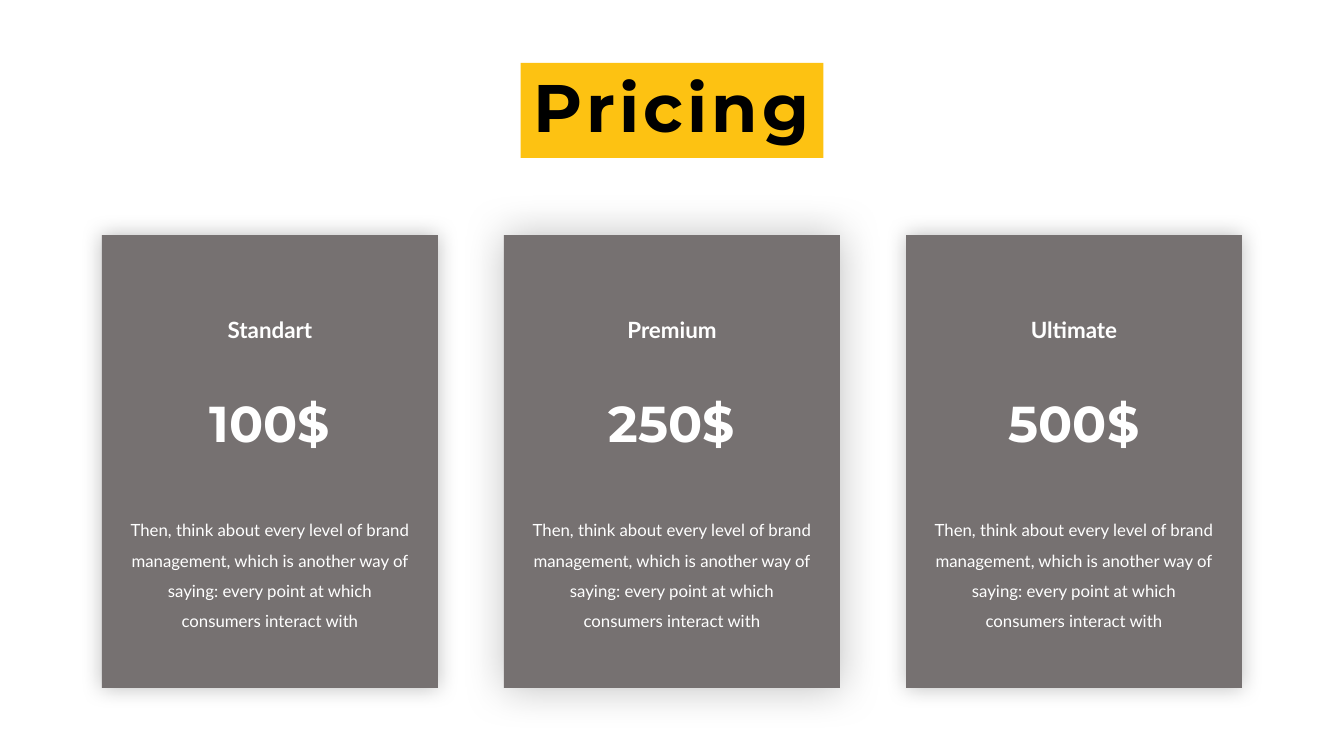
from lxml import etree
from pptx import Presentation
from pptx.dml.color import RGBColor
from pptx.enum.shapes import MSO_SHAPE as Preset
from pptx.enum.text import MSO_ANCHOR as Anchor, MSO_AUTO_SIZE as AutoSize, PP_ALIGN as Align
from pptx.oxml.ns import qn
from pptx.util import Pt

DESCRIPTION = ("Then, think about every level of brand management, which is "
               "another way of saying: every point at which consumers interact with")
TITLE = "Pricing"
PLANS = [
    ("Standart", "100$", DESCRIPTION, 15),
    ("Premium", "250$", DESCRIPTION, 30),
    ("Ultimate", "500$", DESCRIPTION, 15),
]
YELLOW, GRAY, WHITE, BLACK = "FDC212", "767171", "FFFFFF", "000000"

EMU_PER_PX = 914400 / 100.8
SLIDE_WIDTH, SLIDE_HEIGHT = 1344, 756
CARD_WIDTH, CARD_PITCH = 336, 402


def px(length):
    return round(length * EMU_PER_PX)


def color(value):
    return RGBColor.from_string(value)


def place(center, top, width, height):
    return px(center - width / 2), px(top), px(width), px(height)


def add_block(box, fill):
    shape = slide.shapes.add_shape(Preset.RECTANGLE, *box)
    shape.fill.solid()
    shape.fill.fore_color.rgb = color(fill)
    shape.line.fill.background()
    shape.shadow.inherit = False
    return shape


def add_glow_shadow(shape, blur):
    effects = shape._element.spPr.find(qn("a:effectLst"))
    shadow = etree.SubElement(effects, qn("a:outerShdw"), blurRad=str(Pt(blur)),
                              dist="0", dir="0", algn="ctr", rotWithShape="0")
    tint = etree.SubElement(shadow, qn("a:srgbClr"), val=BLACK)
    etree.SubElement(tint, qn("a:alpha"), val="25000")


def add_text(box, text, size, font="Lato", fill=WHITE, bold=False,
             inset=(10, 5), line_spacing=None, tracking=None, grow=False):
    frame = slide.shapes.add_textbox(*box).text_frame
    frame.word_wrap = True
    frame.auto_size = AutoSize.SHAPE_TO_FIT_TEXT if grow else AutoSize.NONE
    frame.vertical_anchor = Anchor.TOP
    frame.margin_left = frame.margin_right = px(inset[0])
    frame.margin_top = frame.margin_bottom = px(inset[1])
    paragraph = frame.paragraphs[0]
    paragraph.alignment = Align.CENTER
    if line_spacing:
        paragraph.line_spacing = line_spacing
    run = paragraph.add_run()
    run.text = text
    run.font.size = Pt(size)
    run.font.name = font
    run.font.bold = bold
    run.font.color.rgb = color(fill)
    if tracking:
        run._r.get_or_add_rPr().set("spc", str(tracking * 100))


presentation = Presentation()
presentation.slide_width = px(SLIDE_WIDTH)
presentation.slide_height = px(SLIDE_HEIGHT)
slide = presentation.slides.add_slide(presentation.slide_layouts[6])
middle = SLIDE_WIDTH / 2

add_block(place(middle, 63, 303, 95), YELLOW)
add_text(place(middle, 60, 418, 92), TITLE, 48, font="Montserrat", fill=BLACK,
         bold=True, tracking=3, grow=True)

for index, (name, price, description, blur) in enumerate(PLANS):
    center = middle + (index - 1) * CARD_PITCH
    card = add_block(place(center, 235, CARD_WIDTH, 453), GRAY)
    add_glow_shadow(card, blur)
    add_text(place(center, 306, 164, 66), name, 16, bold=True, inset=(10, 10))
    add_text(place(center, 382, 176, 66), price, 36, font="Montserrat", bold=True,
             inset=(10, 10))
    add_text(place(center, 505, 303, 132), description, 12, line_spacing=1.5, grow=True)

presentation.save("out.pptx")
